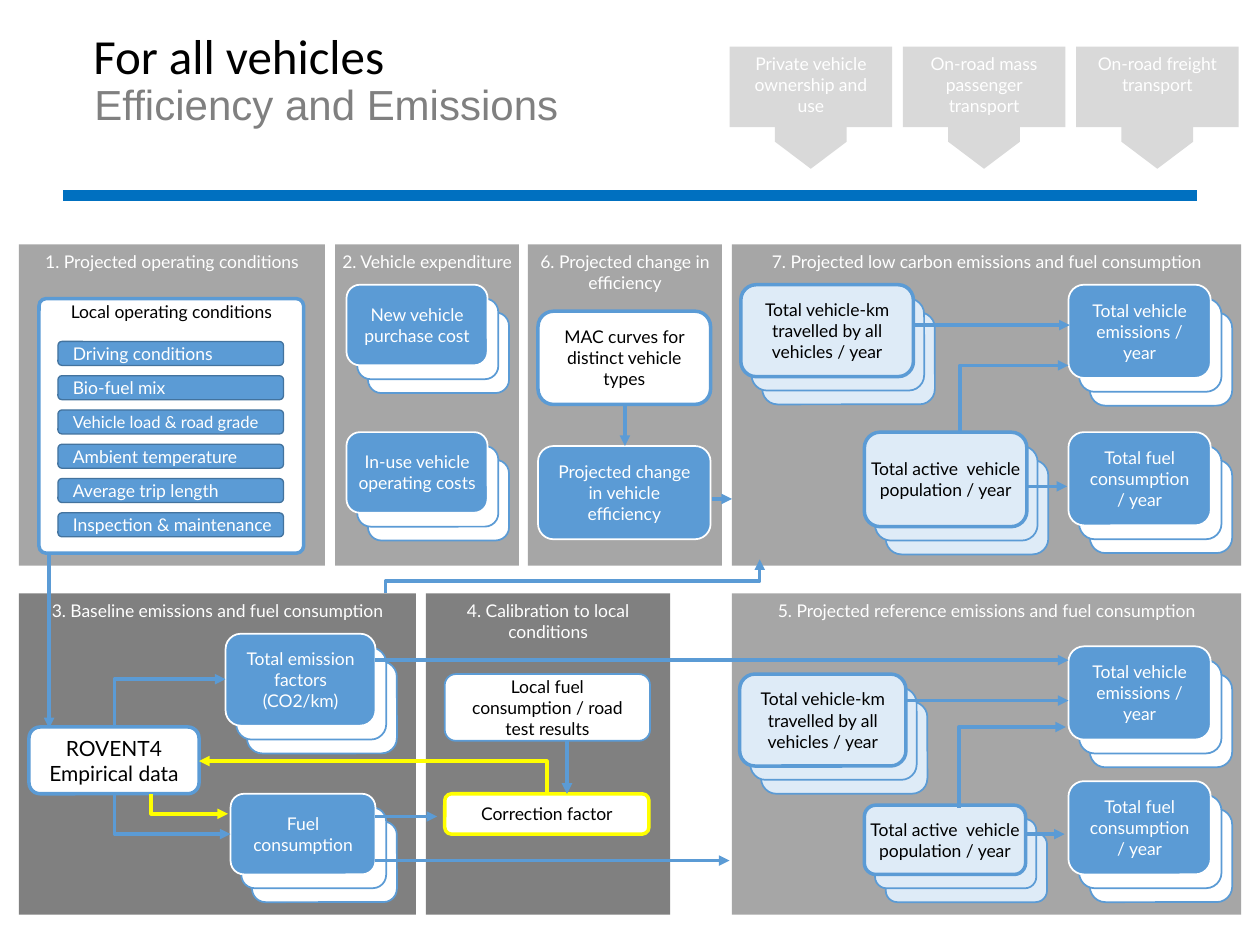
import pptx
import pptx.util
import pptx.dml.color
import pptx.enum.shapes
import pptx.enum.text
import pptx.oxml.ns
import lxml.etree

Inches, Pt = pptx.util.Inches, pptx.util.Pt
SHAPE = pptx.enum.shapes.MSO_SHAPE
CONN = pptx.enum.shapes.MSO_CONNECTOR
ALIGN = pptx.enum.text.PP_ALIGN
ANCHOR = pptx.enum.text.MSO_ANCHOR
qn = pptx.oxml.ns.qn

WHITE, BLACK, BLUE, PALE = "FFFFFF", "000000", "5B9BD5", "DEEBF7"
LIGHT, MID, DARK, YELLOW = "D9D9D9", "A6A6A6", "808080", "FFFF00"


def rgb(color):
    return pptx.dml.color.RGBColor.from_string(color)


def put_text(sp, text, size=10, font="Lato", color=WHITE, align=ALIGN.CENTER,
             anchor=ANCHOR.MIDDLE, insets=(0.09, 0.06, 0.09, 0.06)):
    """Write text into a shape, one paragraph per line."""
    tf = sp.text_frame
    tf.word_wrap = True
    tf.vertical_anchor = anchor
    tf.margin_left, tf.margin_top, tf.margin_right, tf.margin_bottom = map(Inches, insets)
    for i, line in enumerate(text.split("\n")):
        p = tf.paragraphs[0] if i == 0 else tf.add_paragraph()
        p.alignment = align
        r = p.add_run()
        r.text = line
        r.font.size, r.font.name = Pt(size), font
        r.font.color.rgb = rgb(color)


class Diagram:
    step_x, step_y = 0.085, 0.11  # offset between the cards of a stack

    def __init__(self, slide):
        self.s = slide

    def shape(self, kind, x, y, w, h, fill, line=None, width=1):
        sp = self.s.shapes.add_shape(kind, *map(Inches, (x, y, w, h)))
        sp.shadow.inherit = False
        sp.fill.solid()
        sp.fill.fore_color.rgb = rgb(fill)
        if line:
            sp.line.color.rgb = rgb(line)
            sp.line.width = Pt(width)
        else:
            sp.line.fill.background()
        return sp

    def panel(self, text, x, y, w, h=2.55, fill=MID, side=0):
        sp = self.shape(SHAPE.RECTANGLE, x, y, w, h, fill)
        put_text(sp, text, anchor=ANCHOR.TOP, insets=(side, 0.05, side, 0.06))

    def box(self, text, x, y, w, h, fill=WHITE, line=BLUE, width=2, color=BLACK, **fmt):
        sp = self.shape(SHAPE.ROUNDED_RECTANGLE, x, y, w, h, fill, line, width)
        put_text(sp, text, color=color, **fmt)
        return sp

    def stack(self, text, x, y, w, h, pale=False, side=0.09):
        for n in (2, 1):
            self.shape(SHAPE.ROUNDED_RECTANGLE, x + n * self.step_x, y + n * self.step_y,
                       w, h, PALE if pale else WHITE, BLUE)
        look = (PALE, BLUE, 2, BLACK) if pale else (BLUE, WHITE, 1, WHITE)
        self.box(text, x, y, w, h, *look, insets=(side, 0.06, side, 0.06))

    def line(self, start, end, color=BLUE, width=2, kind=CONN.STRAIGHT, arrow="tailEnd"):
        c = self.s.shapes.add_connector(kind, *map(Inches, (*start, *end)))
        c.line.color.rgb = rgb(color)
        c.line.width = Pt(width)
        if arrow:
            ln = c.line._get_or_add_ln()
            lxml.etree.SubElement(ln, qn("a:" + arrow), type="triangle")
        lxml.etree.SubElement(c._element.spPr, qn("a:effectLst"))
        return c

    def corner(self, start, end, color=BLUE):
        """Arrow going vertically, then horizontally; drawn from its tip back."""
        c = self.line(end, start, color, kind=CONN.ELBOW, arrow="headEnd")
        c._element.spPr.find(qn("a:prstGeom")).set("prst", "bentConnector2")

    def riser(self, start, end, bend):
        """Arrow going up, right and up; an elbow turned by 270 degrees."""
        (x1, y1), (x2, y2) = start, end
        mx, my, w, h = (x1 + x2) / 2, (y1 + y2) / 2, y1 - y2, x2 - x1
        c = self.line((mx - w / 2, my - h / 2), (mx + w / 2, my + h / 2), kind=CONN.ELBOW)
        spPr = c._element.spPr
        spPr.find(qn("a:xfrm")).set("rot", str(270 * 60000))
        av = spPr.find(qn("a:prstGeom")).get_or_add_avLst()
        lxml.etree.SubElement(av, qn("a:gd"), name="adj1", fmla=f"val {round(bend * 100000)}")


def main():
    prs = pptx.Presentation()
    prs.slide_width, prs.slide_height = Inches(10), Inches(7.5)
    s = prs.slides.add_slide(prs.slide_layouts[5])
    d = Diagram(s)

    # Heading
    title = s.shapes.title
    title.left, title.top, title.width, title.height = map(Inches, (0.64, 0.15, 9.14, 0.85))
    put_text(title, "For all vehicles", size=28, font="Calibri", color=BLACK,
             align=ALIGN.LEFT, anchor=ANCHOR.TOP, insets=(0.1, 0.05, 0.1, 0.05))
    d.line((0.5, 1.55), (9.5, 1.55), "0070C0", 6, arrow=None)

    # Vehicle groups with down-pointing tabs
    groups = [("Private vehicle ownership and use", 0.12),
              ("On-road mass passenger transport", 0.05),
              ("On-road freight transport", 0.12)]
    for i, (text, side) in enumerate(groups):
        x = 5.79 + i * 1.375
        d.shape(SHAPE.PENTAGON, x + 0.43, 0.84, 0.43, 0.57, LIGHT).rotation = 90
        d.panel(text, x, 0.37, 1.29, 0.64, LIGHT, side)

    sub = s.shapes.add_textbox(*map(Inches, (0.63, 0.56, 9.37, 0.52)))
    put_text(sub, "Efficiency and Emissions", size=24, font="Arial", color=DARK,
             align=ALIGN.LEFT, anchor=ANCHOR.TOP, insets=(0.12, 0.06, 0.12, 0.06))

    # Panels
    top, bottom = 1.94, 4.71
    d.panel("1. Projected operating conditions", 0.15, top, 2.43)
    d.panel("2. Vehicle expenditure", 2.66, top, 1.46)
    d.panel("6. Projected change in efficiency", 4.19, top, 1.54)
    d.panel("7. Projected low carbon emissions and fuel consumption", 5.81, top, 4.04)
    d.panel("3. Baseline emissions and fuel consumption", 0.15, bottom, 3.15, fill=DARK)
    d.panel("4. Calibration to local conditions", 3.38, bottom, 1.94, fill=DARK)
    d.panel("5. Projected reference emissions and fuel consumption", 5.81, bottom, 4.04)

    # 1. Operating conditions
    sp = d.box("Local operating conditions", 0.31, 2.37, 2.1, 2.02,
               anchor=ANCHOR.TOP, insets=(0, 0, 0, 0.06))
    sp.adjustments[0] = 0.028
    conditions = ["Driving conditions", "Bio-fuel mix", "Vehicle load & road grade",
                  "Ambient temperature", "Average trip length", "Inspection & maintenance"]
    for i, text in enumerate(conditions):
        d.box(text, 0.46, 2.71 + i * 0.272, 1.79, 0.19, BLUE, "43739E", 0.75, WHITE,
              size=9.5 if "load" in text else 10, align=ALIGN.LEFT,
              insets=(0.11, 0.06, 0, 0.06))

    # 2. Expenditure
    d.stack("New vehicle purchase cost", 2.75, 2.26, 1.12, 0.64, side=0)
    d.stack("In-use vehicle operating costs", 2.75, 3.43, 1.12, 0.64, side=0)

    # 3. Baseline
    d.box("ROVENT4\nEmpirical data", 0.23, 5.77, 1.35, 0.53, size=12)
    d.stack("Total emission factors\n(CO2/km)", 1.79, 5.03, 1.19, 0.73)
    d.stack("Fuel consumption", 1.83, 6.3, 1.15, 0.64)

    # 4. Calibration
    d.box("Local fuel consumption / road test results", 3.53, 5.35, 1.63, 0.53, width=1)
    d.box("Correction factor", 3.53, 6.3, 1.62, 0.32, line=YELLOW, insets=(0, 0.06, 0, 0.06))

    # 6. Efficiency
    d.box("MAC curves for distinct vehicle types", 4.27, 2.47, 1.37, 0.74)
    d.box("Projected change in vehicle efficiency", 4.27, 3.54, 1.37, 0.74,
          BLUE, WHITE, 1, WHITE)

    # 7 and 5. Projections
    distance = "Total vehicle-km travelled by all vehicles / year"
    population = "Total active  vehicle population / year"
    d.stack(distance, 5.88, 2.26, 1.37, 0.73, pale=True, side=0)
    d.stack(population, 6.86, 3.43, 1.29, 0.75, pale=True, side=0)
    d.stack(distance, 5.87, 5.35, 1.32, 0.73, pale=True, side=0)
    d.stack(population, 6.86, 6.39, 1.28, 0.55, pale=True, side=0)
    for emissions_y, fuel_y in ((2.26, 3.43), (5.13, 6.2)):
        d.stack("Total vehicle emissions / year", 8.48, emissions_y, 1.13, 0.74)
        d.stack("Total fuel consumption / year", 8.48, fuel_y, 1.13, 0.74)

    # Straight arrows
    for start, end in [((0.39, 4.39), (0.39, 5.78)), ((4.5, 5.88), (4.5, 6.3)),
                       ((4.96, 3.22), (4.96, 3.54)), ((5.65, 3.96), (5.81, 3.96)),
                       ((2.98, 5.24), (8.48, 5.24)), ((2.98, 6.48), (3.47, 6.48)),
                       ((2.98, 6.83), (5.79, 6.83)), ((7.26, 2.58), (8.49, 2.58)),
                       ((8.14, 3.86), (8.47, 3.86)), ((7.18, 5.56), (8.48, 5.56)),
                       ((8.13, 6.62), (8.45, 6.62))]:
        d.line(start, end)

    # Bent arrows
    for start, end, color in [((0.91, 6.3), (1.83, 6.62), BLUE),
                              ((0.91, 5.77), (1.79, 5.39), BLUE),
                              ((7.62, 3.43), (8.48, 2.9), BLUE),
                              ((7.61, 6.41), (8.46, 5.77), BLUE),
                              ((4.34, 6.3), (1.58, 6.04), YELLOW),
                              ((1.2, 6.3), (1.81, 6.46), YELLOW)]:
        d.corner(start, end, color)
    d.riser((3.06, 4.71), (6.03, 4.44), 0.37)

    prs.save("out.pptx")


if __name__ == "__main__":
    main()
